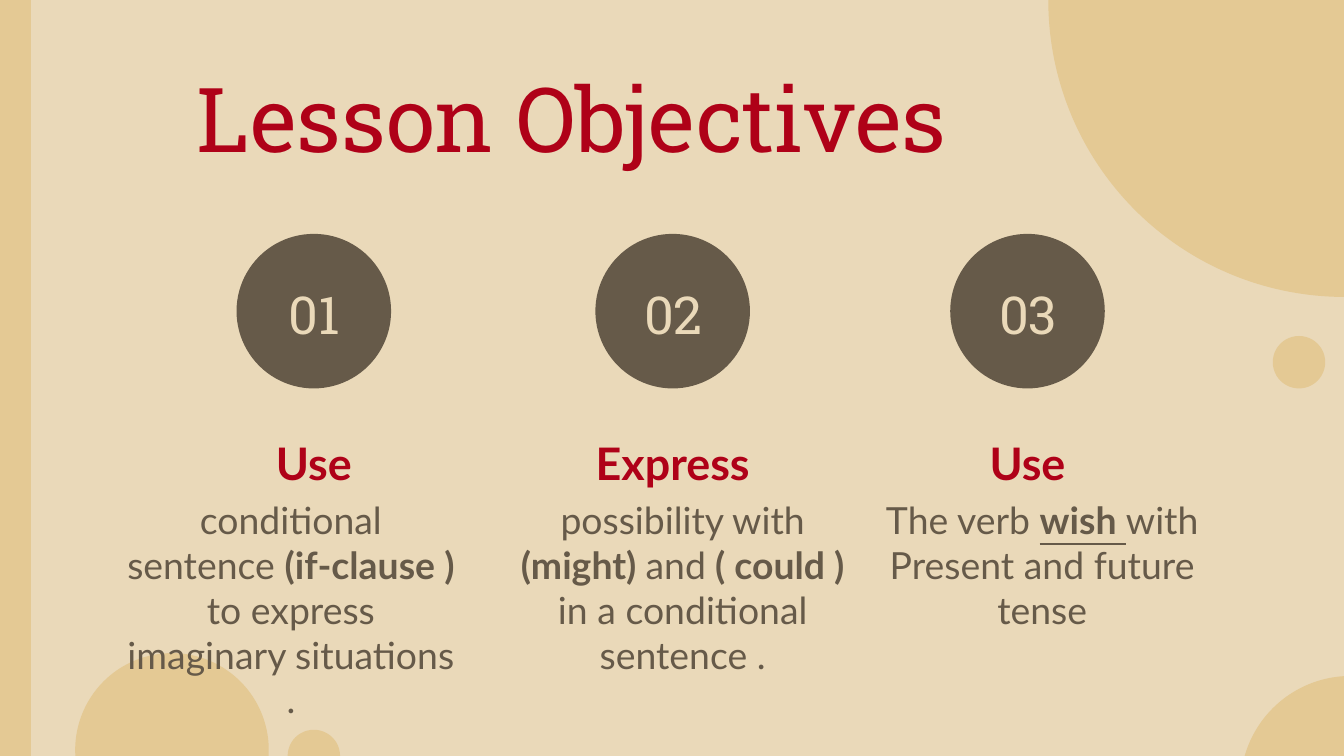
from pptx import Presentation
from pptx.dml.color import RGBColor
from pptx.enum.shapes import MSO_SHAPE as Shape
from pptx.enum.text import MSO_ANCHOR as Anchor, PP_ALIGN as Align
from pptx.util import Inches, Pt

SAND = RGBColor(0xEA, 0xD9, 0xB9)
GOLD = RGBColor(0xE4, 0xC9, 0x94)
BROWN = RGBColor(0x66, 0x5A, 0x49)
RED = RGBColor(0xAF, 0x01, 0x18)
HEADING_FONT, BODY_FONT = "Roboto Slab", "Lato"
WIDTH = 10
HEIGHT = WIDTH * 9 / 16

PLAIN, BOLD, UNDERLINED = (False, False), (True, False), (True, True)

# Left edge of the circle, number, heading, paragraphs of (text, style) runs,
# and left edge and width of the description
OBJECTIVES = [
    (1.76, "01", "Use",
     [[("conditional sentence ", PLAIN), ("(if-clause ) ", BOLD),
       ("to express imaginary situations .", PLAIN)]], 0.83, 2.67),
    (4.43, "02", "Express",
     [[("possibility with ", PLAIN), ("(might) ", BOLD), ("and", PLAIN),
       (" ( could )", BOLD)],
      [("in a conditional sentence .", PLAIN)]], 3.74, 2.68),
    (7.07, "03", "Use",
     [[("The verb ", PLAIN), ("wish ", UNDERLINED), ("with", PLAIN)],
      [("Present and future tense", PLAIN)]], 6.49, 2.53),
]


def add_filled(slide, kind, left, top, width, height, color):
    shape = slide.shapes.add_shape(
        kind, Inches(left), Inches(top), Inches(width), Inches(height))
    shape.shadow.inherit = False
    shape.fill.solid()
    shape.fill.fore_color.rgb = color
    shape.line.fill.background()


def add_text(slide, left, top, width, height, paragraphs, font, size, color,
             anchor=Anchor.TOP):
    """Add a centred text box from paragraphs of (text, (bold, underline)) runs."""
    box = slide.shapes.add_textbox(
        Inches(left), Inches(top), Inches(width), Inches(height))
    frame = box.text_frame
    frame.word_wrap = True
    frame.vertical_anchor = anchor
    frame.margin_left = frame.margin_right = Inches(0.1)
    frame.margin_top = frame.margin_bottom = Inches(0.1)
    for index, runs in enumerate(paragraphs):
        paragraph = frame.add_paragraph() if index else frame.paragraphs[0]
        paragraph.alignment = Align.CENTER
        paragraph.font.name = font
        paragraph.font.size = Pt(size)
        paragraph.font.color.rgb = color
        for text, (bold, underline) in runs:
            run = paragraph.add_run()
            run.text = text
            run.font.bold = bold
            run.font.underline = underline


def add_backdrop(slide):
    slide.background.fill.solid()
    slide.background.fill.fore_color.rgb = SAND
    bubbles = [(0.56, 4.86, 1.44), (7.8, -2.2, 4.41), (9.23, 5.03, 1.64),
               (2.14, 5.43, 0.39), (9.47, 2.5, 0.39)]
    for left, top, diameter in bubbles:
        add_filled(slide, Shape.OVAL, left, top, diameter, diameter, GOLD)
    add_filled(slide, Shape.RECTANGLE, 0, 0, 0.23, HEIGHT, GOLD)


def add_objective(slide, left, top, number, heading, description,
                  description_left, description_width):
    """Add one column whose circle has its corner at (left, top)."""
    diameter, heading_width = 1.15, 2.19
    add_filled(slide, Shape.OVAL, left, top, diameter, diameter, BROWN)
    add_text(slide, left + 0.05, top + 0.21, 1.06, 0.72, [[(number, PLAIN)]],
             HEADING_FONT, 28, SAND, Anchor.BOTTOM)
    add_text(slide, left + (diameter - heading_width) / 2, top + 1.49,
             heading_width, 0.42, [[(heading, BOLD)]],
             BODY_FONT, 24, RED, Anchor.MIDDLE)
    add_text(slide, description_left, top + 1.86, description_width, 1.15,
             description, BODY_FONT, 20, BROWN)


def main():
    deck = Presentation()
    deck.slide_width, deck.slide_height = Inches(WIDTH), Inches(HEIGHT)
    slide = deck.slides.add_slide(deck.slide_layouts[6])
    add_backdrop(slide)
    add_text(slide, 0.91, 0.37, 6.69, 0.63, [[("Lesson Objectives", PLAIN)]],
             HEADING_FONT, 48, RED)
    for left, *content in OBJECTIVES:
        add_objective(slide, left, 1.74, *content)
    deck.save("out.pptx")


if __name__ == "__main__":
    main()
